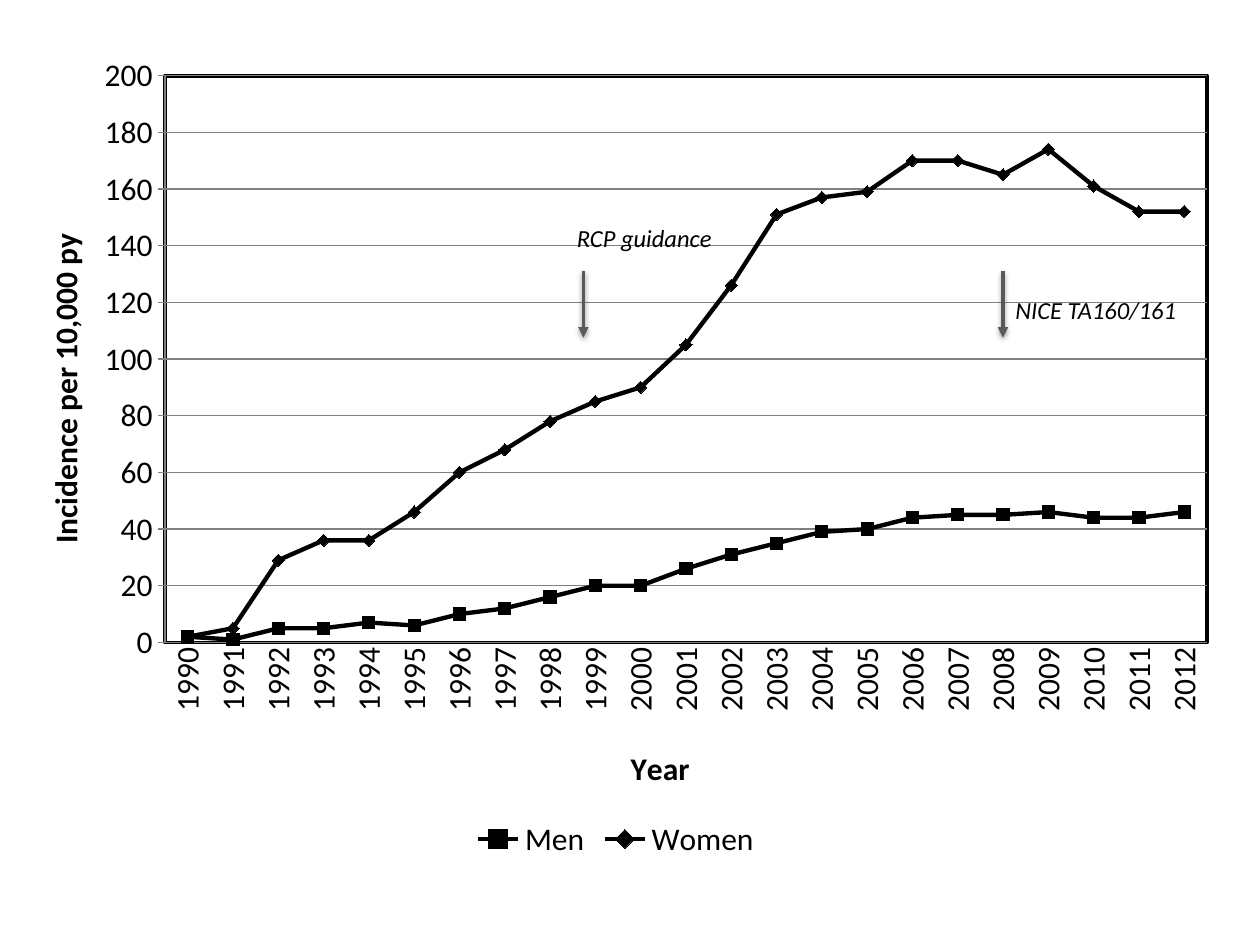
from lxml import etree
from pptx import Presentation
from pptx.chart.data import CategoryChartData
from pptx.dml.color import RGBColor
from pptx.enum.chart import (XL_CHART_TYPE, XL_LEGEND_POSITION, XL_MARKER_STYLE,
                             XL_TICK_MARK)
from pptx.enum.shapes import MSO_CONNECTOR
from pptx.enum.text import MSO_AUTO_SIZE
from pptx.oxml import parse_xml
from pptx.oxml.ns import nsdecls, qn
from pptx.util import Inches, Pt

BLACK = RGBColor(0, 0, 0)
WHITE = RGBColor(255, 255, 255)
GRID_GREY = RGBColor(0x80, 0x80, 0x80)
ARROW_GREY = RGBColor(0x59, 0x59, 0x59)
FONT = "Calibri"

YEARS = [str(year) for year in range(1990, 2013)]
SERIES = [
    ("Men", XL_MARKER_STYLE.SQUARE,
     [2, 1, 5, 5, 7, 6, 10, 12, 16, 20, 20, 26, 31, 35, 39, 40, 44, 45, 45, 46,
      44, 44, 46]),
    ("Women", XL_MARKER_STYLE.DIAMOND,
     [2, 5, 29, 36, 36, 46, 60, 68, 78, 85, 90, 105, 126, 151, 157, 159, 170,
      170, 165, 174, 161, 152, 152]),
]
CHART_BOX = (0, 0.31, 9.78, 6.55)
PLOT_BOX = (1.31, 0.29, 8.27, 4.5)  # inches inside the chart
YEAR_TITLE_AT = (4.96, 5.57)
INCIDENCE_TITLE_AT = (0.3, 1.5)
NOTES = [
    ("RCP guidance", (4.48, 1.72, 1.32, 0.34)),
    ("NICE TA160/161", (7.96, 2.29, 1.71, 0.34)),
]
ARROW_XS = (4.63, 7.96)
ARROW_TOP, ARROW_BOTTOM = 2.15, 2.68


def apply_format(target, **values):
    for name, value in values.items():
        setattr(target, name, value)


def set_font(font, size, **values):
    apply_format(font, name=FONT, size=Pt(size), **values)
    font.color.rgb = BLACK


def set_line(line, color, width):
    line.color.rgb = color
    line.width = Pt(width)


def place_in_chart(element, index, box):
    """Give a chart part a manual layout, from inches inside the chart."""
    for old in element.findall(qn("c:layout")):
        element.remove(old)
    layout = parse_xml(f"<c:layout {nsdecls('c')}><c:manualLayout/></c:layout>")
    settings = [("xMode", "edge"), ("yMode", "edge")]
    if len(box) == 4:
        settings.insert(0, ("layoutTarget", "inner"))
    settings += [(key, f"{length / CHART_BOX[2 + i % 2]:.4f}")
                 for i, (key, length) in enumerate(zip("xywh", box))]
    for key, value in settings:
        etree.SubElement(layout[0], qn(f"c:{key}")).set("val", value)
    element.insert(index, layout)


def title_axis(axis, text, position):
    frame = axis.axis_title.text_frame
    frame.text = text
    set_font(frame.paragraphs[0].runs[0].font, 18, bold=True)
    place_in_chart(axis.axis_title._element, 1, position)


def add_incidence_chart(page):
    data = CategoryChartData(number_format="0")
    data.categories = YEARS
    for name, _, values in SERIES:
        data.add_series(name, values)
    chart = page.shapes.add_chart(XL_CHART_TYPE.LINE_MARKERS,
                                  *map(Inches, CHART_BOX), data).chart
    apply_format(chart, has_title=False, has_legend=True)
    apply_format(chart.legend, position=XL_LEGEND_POSITION.BOTTOM,
                 include_in_layout=False)
    set_font(chart.font, 18)

    chart.plots[0].vary_by_categories = False
    for series, (_, marker, _) in zip(chart.plots[0].series, SERIES):
        series.smooth = False
        set_line(series.format.line, BLACK, 2.5)
        apply_format(series.marker, style=marker, size=7)
        series.marker.format.fill.solid()
        series.marker.format.fill.fore_color.rgb = BLACK
        series.marker.format.line.color.rgb = BLACK

    years, incidence = chart.category_axis, chart.value_axis
    apply_format(years, major_tick_mark=XL_TICK_MARK.NONE,
                 has_major_gridlines=False)
    apply_format(incidence, minimum_scale=0, maximum_scale=200, major_unit=20,
                 major_tick_mark=XL_TICK_MARK.OUTSIDE, has_major_gridlines=True)
    set_line(incidence.major_gridlines.format.line, GRID_GREY, 0.75)
    for axis in (years, incidence):
        set_line(axis.format.line, GRID_GREY, 0.75)
        set_font(axis.tick_labels.font, 18)
    apply_format(incidence.tick_labels, number_format="0",
                 number_format_is_linked=False)
    years_text = years._element.find(qn("c:txPr")).find(qn("a:bodyPr"))
    years_text.set("rot", "-5400000")
    years_text.set("vert", "horz")
    title_axis(years, "Year", YEAR_TITLE_AT)
    title_axis(incidence, "Incidence per 10,000 py", INCIDENCE_TITLE_AT)

    plot_area = chart._chartSpace.chart.plotArea
    place_in_chart(plot_area, 0, PLOT_BOX)
    plot_area.append(parse_xml(
        f'<c:spPr {nsdecls("c", "a")}>'
        f'<a:solidFill><a:srgbClr val="{WHITE}"/></a:solidFill>'
        f'<a:ln w="{Pt(2.25)}"><a:solidFill><a:srgbClr val="{BLACK}"/>'
        '</a:solidFill></a:ln></c:spPr>'))


def add_note(page, text, box):
    frame = page.shapes.add_textbox(*map(Inches, box)).text_frame
    apply_format(frame, word_wrap=True, auto_size=MSO_AUTO_SIZE.SHAPE_TO_FIT_TEXT)
    span = frame.paragraphs[0].add_run()
    span.text = text
    set_font(span.font, 14, italic=True)


def add_arrow(page, x):
    arrow = page.shapes.add_connector(
        MSO_CONNECTOR.STRAIGHT,
        *map(Inches, (x, ARROW_TOP, x, ARROW_BOTTOM)))
    set_line(arrow.line, ARROW_GREY, 2)
    properties = arrow._element.spPr
    etree.SubElement(properties.find(qn("a:ln")), qn("a:tailEnd")).set(
        "type", "triangle")
    properties.append(parse_xml(
        f'<a:effectLst {nsdecls("a")}><a:outerShdw blurRad="{Pt(3.1)}" '
        f'dist="{Pt(1.6)}" dir="5400000" rotWithShape="0">'
        f'<a:srgbClr val="{BLACK}"><a:alpha val="38000"/></a:srgbClr>'
        '</a:outerShdw></a:effectLst>'))


def main():
    deck = Presentation()
    apply_format(deck, slide_width=Inches(10), slide_height=Inches(7.5))
    page = deck.slides.add_slide(deck.slide_layouts[6])
    add_incidence_chart(page)
    for text, box in NOTES:
        add_note(page, text, box)
    for x in ARROW_XS:
        add_arrow(page, x)
    deck.save("out.pptx")


if __name__ == "__main__":
    main()
